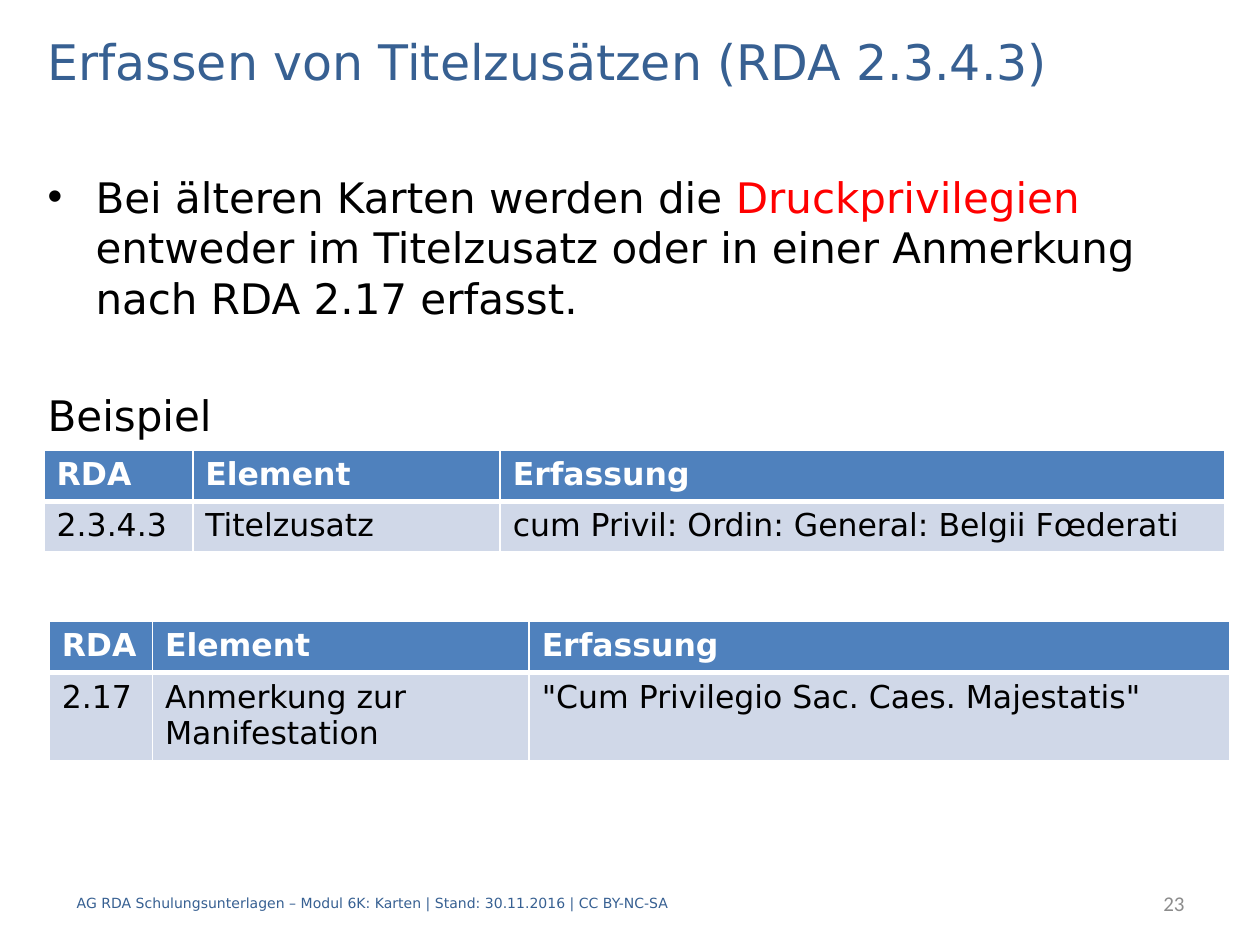
from lxml.etree import SubElement
from pptx import Presentation
from pptx.dml.color import RGBColor as RGB
from pptx.enum.text import MSO_ANCHOR as Anchor, PP_ALIGN as Align
from pptx.oxml.ns import qn
from pptx.util import Inches, Pt

# Content
FONT, BLUE, BLACK, WHITE = "DejaVu Sans", "376092", "000000", "FFFFFF"
HEAD, BODY = "4F81BD", "D0D8E8"
TITLE = "Erfassen von Titelzusätzen (RDA 2.3.4.3)"
POINT = [("Bei älteren Karten werden die ", BLACK), ("Druckprivilegien ", "FF0000"),
         ("entweder im Titelzusatz oder in einer Anmerkung nach RDA 2.17 erfasst.", BLACK)]
FOOT = "AG RDA Schulungsunterlagen – Modul 6K: Karten | Stand: 30.11.2016 | CC BY-NC-SA"
HEADS = ["RDA", "Element", "Erfassung"]
TABLES = [
    dict(left=0.35, top=3.57, cols=[1.18, 2.44, 5.75], rows=[0.41, 0.38],
         entry=["2.3.4.3", "Titelzusatz", "cum Privil: Ordin: General: Belgii Fœderati"]),
    dict(left=0.39, top=4.93, cols=[0.82, 2.99, 5.56], rows=[0.41, 0.7],
         entry=["2.17", "Anmerkung zur Manifestation",
                '"Cum Privilegio Sac. Caes. Majestatis"']),
]


def write(frame, text, size=18, color=BLACK, font=FONT, bold=False,
          align=Align.LEFT, before=0):
    """Write a string, or a list of (text, colour) runs, as one paragraph."""
    par = frame.paragraphs[0]
    par.alignment, par.space_before = align, Pt(before)
    for part, tint in [(text, color)] if isinstance(text, str) else text:
        run = par.add_run()
        run.text = part
        run.font.size, run.font.name, run.font.bold = Pt(size), font, bold
        run.font.color.rgb = RGB.from_string(tint)
    return par


def add_text(slide, box, text, anchor=Anchor.TOP, **style):
    frame = slide.shapes.add_textbox(*map(Inches, box)).text_frame
    frame.word_wrap, frame.vertical_anchor = True, anchor
    return write(frame, text, **style)


def add_bullet(par, indent):
    props = par._p.get_or_add_pPr()
    props.set("marL", str(Inches(indent)))
    props.set("indent", str(-Inches(indent)))
    SubElement(props, qn("a:buFont"), typeface="Arial")
    SubElement(props, qn("a:buChar"), char="•")


def add_edges(cell, below):
    """Draw white borders; the lower and upper widths differ by row."""
    props = cell._tc.get_or_add_tcPr()
    widths = {"a:lnL": 1, "a:lnR": 1, "a:lnT": 1, "a:lnB": below}
    for spot, (tag, width) in enumerate(widths.items()):
        line = SubElement(props, qn(tag), w=str(Pt(width)))
        fill = SubElement(line, qn("a:solidFill"))
        SubElement(fill, qn("a:srgbClr"), val=WHITE)
        props.insert(spot, line)


def add_grid(slide, left, top, cols, rows, entry):
    box = map(Inches, (left, top, sum(cols), sum(rows)))
    grid = slide.shapes.add_table(len(rows), len(cols), *box).table
    for col, width in zip(grid.columns, cols):
        col.width = Inches(width)
    for r, (height, texts) in enumerate(zip(rows, (HEADS, entry))):
        grid.rows[r].height = Inches(height)
        top_row = r == 0
        for c, text in enumerate(texts):
            cell = grid.cell(r, c)
            cell.fill.solid()
            cell.fill.fore_color.rgb = RGB.from_string(HEAD if top_row else BODY)
            add_edges(cell, 3 if top_row else 1)
            write(cell.text_frame, text, bold=top_row,
                  color=WHITE if top_row else BLACK)


def main():
    deck = Presentation()
    deck.slide_width, deck.slide_height = Inches(10), Inches(7.5)
    slide = deck.slides.add_slide(deck.slide_layouts[6])

    # Title and main point
    add_text(slide, (0.28, 0.2, 9.72, 0.56), TITLE, Anchor.MIDDLE, size=28, color=BLUE)
    point = add_text(slide, (0.28, 1.31, 9.61, 1.18), POINT, size=24, before=2)
    add_bullet(point, 0.38)

    # Examples
    add_text(slide, (0.28, 3.04, 2.28, 0.55), "Beispiel", size=24, before=2)
    for table in TABLES:
        add_grid(slide, **table)

    # Footer and page number
    add_text(slide, (0.51, 6.97, 8.35, 0.4), FOOT, Anchor.MIDDLE, size=8, color=BLUE)
    add_text(slide, (7.91, 6.97, 1.59, 0.4), "23", Anchor.MIDDLE, size=12,
             color="8C8C8C", font="Calibri", align=Align.RIGHT)
    deck.save("out.pptx")


if __name__ == "__main__":
    main()
